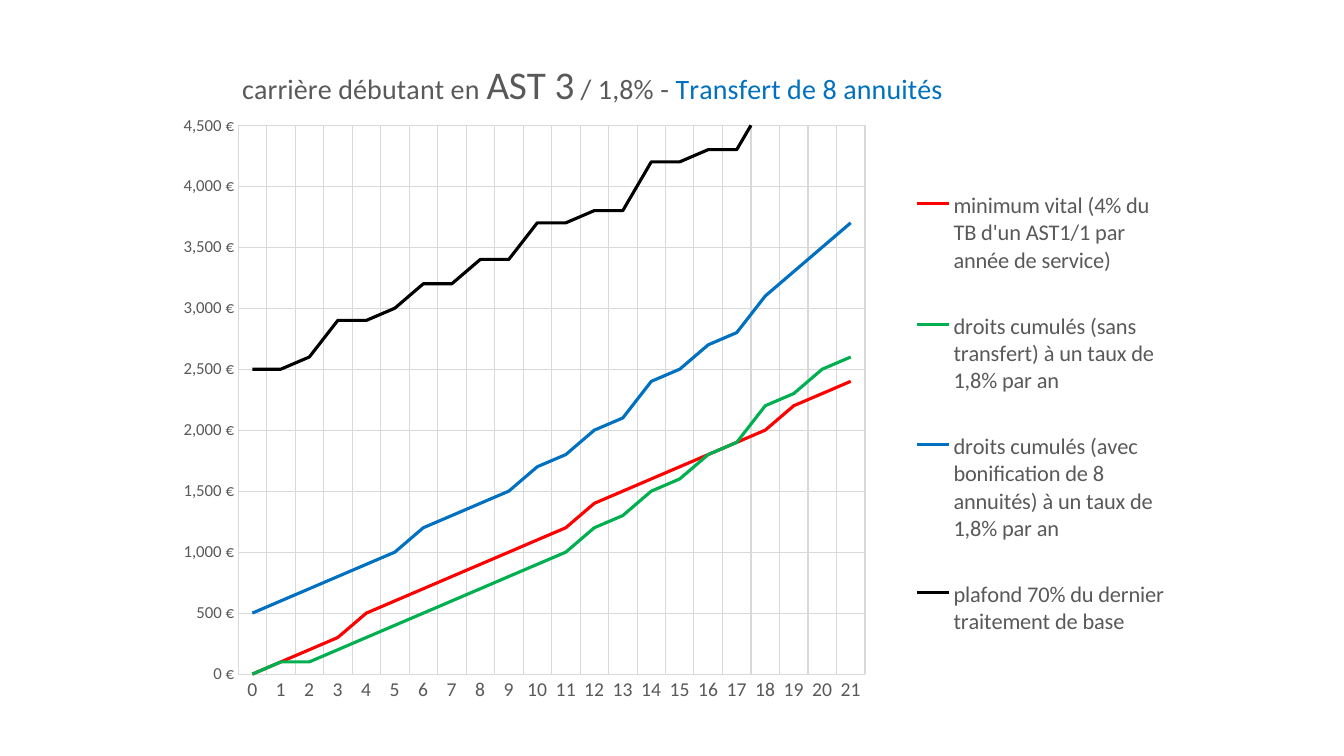
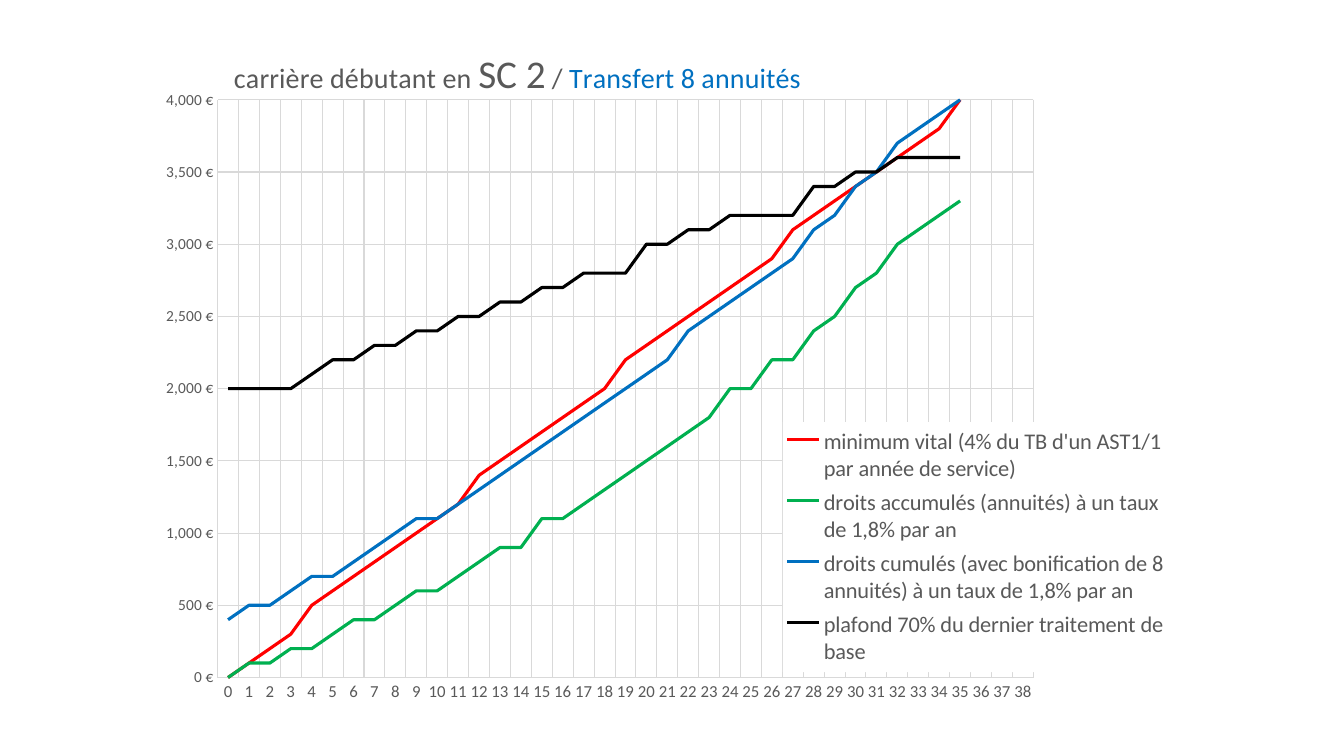
from pptx import Presentation
from pptx.chart.data import CategoryChartData as Data
from pptx.dml.color import RGBColor as Rgb
from pptx.enum.chart import XL_CHART_TYPE as Kind, XL_LEGEND_POSITION as Side
from pptx.enum.chart import XL_MARKER_STYLE as Mark, XL_TICK_MARK as Tick
from pptx.oxml.ns import qn
from pptx.oxml.xmlchemy import OxmlElement as Elem
from pptx.util import Cm, Pt

HUES = {"text": "595959", "grid": "D9D9D9", "red": "FF0000", "green": "00B050",
        "blue": "0070C0", "black": "000000", "white": "FFFFFF"}
FACE = "Calibri"
LINES = ["red", "green", "blue", "black"]
BASE = 1.132
UNIT = 100

SLIDES = [
    {"title": [("carrière débutant en ", 20, "text"), ("AST 3", 28, "text"),
               (" / 1,8% - ", 20, "text"), ("Transfert de 8 annuités", 20, "blue")],
     "name": "droits cumulés (sans transfert) à un taux de 1,8% par an",
     "years": 22, "top": 4500, "sizes": (14, 12),
     "head": (0.078, 0.022), "plot": (0.077, 0.123, 0.611, 0.819),
     "key": (0.734, 0.166, 0.25, 0.777),
     "green": [0, 1, 1, 2, 3, 4, 5, 6, 7, 8, 9, 10, 12, 13, 15, 16, 18, 19, 22,
               23, 25, 26],
     "blue": [5, 6, 7, 8, 9, 10, 12, 13, 14, 15, 17, 18, 20, 21, 24, 25, 27, 28,
              31, 33, 35, 37],
     "black": [25, 25, 26, 29, 29, 30, 32, 32, 34, 34, 37, 37, 38, 38, 42, 42,
               43, 43, 47, 47, 49, 49]},
    {"title": [("carrière débutant en ", 20, "text"), ("SC 2", 28, "text"),
               (" / ", 20, "text"), ("Transfert 8 annuités", 20, "blue")],
     "name": "droits accumulés (annuités) à un taux de 1,8% par an",
     "years": 39, "top": 4000, "sizes": (12, 11),
     "head": (0.07, 0.005), "plot": (0.057, 0.085, 0.795, 0.862),
     "key": (0.608, 0.566, 0.375, 0.373),
     "green": [0, 1, 1, 2, 2, 3, 4, 4, 5, 6, 6, 7, 8, 9, 9, 11, 11, 12, 13, 14,
               15, 16, 17, 18, 20, 20, 22, 22, 24, 25, 27, 28, 30, 31, 32, 33],
     "blue": [4, 5, 5, 6, 7, 7, 8, 9, 10, 11, 11, 12, 13, 14, 15, 16, 17, 18, 19,
              20, 21, 22, 24, 25, 26, 27, 28, 29, 31, 32, 34, 35, 37, 38, 39, 40],
     "black": [20, 20, 20, 20, 21, 22, 22, 23, 23, 24, 24, 25, 25, 26, 26, 27, 27,
               28, 28, 28, 30, 30, 31, 31, 32, 32, 32, 32, 34, 34, 35, 35, 36, 36,
               36, 36]},
]


def style(font, size, hue):
    font.name = FACE
    font.size = Pt(size)
    font.bold = False
    font.color.rgb = Rgb.from_string(HUES[hue])


def place(part, spot, box, inner=False):
    old = part.find(qn("c:layout"))
    if old is not None:
        part.remove(old)
    frame = Elem("c:layout")
    rule = Elem("c:manualLayout")
    frame.append(rule)
    pairs = [("layoutTarget", "inner")] if inner else []
    pairs += [("xMode", "edge"), ("yMode", "edge")]
    pairs += zip("xywh", box)
    for tag, val in pairs:
        item = Elem("c:" + tag)
        item.set("val", str(val))
        rule.append(item)
    part.insert(spot, frame)


deck = Presentation()
deck.slide_width = Cm(33.87)
deck.slide_height = Cm(19.05)

for info in SLIDES:
    slide = deck.slides.add_slide(deck.slide_layouts[6])
    red = [round(BASE * n) for n in range(len(info["black"]))]
    rows = [
        ("minimum vital (4% du TB d'un AST1/1 par année de service)", red),
        (info["name"], info["green"]),
        ("droits cumulés (avec bonification de 8 annuités) à un taux de 1,8% par an",
         info["blue"]),
        ("plafond 70% du dernier traitement de base", info["black"]),
    ]
    data = Data()
    data.categories = [str(n) for n in range(info["years"])]
    for name, vals in rows:
        data.add_series(name, [UNIT * val for val in vals])

    chart = slide.shapes.add_chart(Kind.LINE, Cm(4.01), Cm(1.08), Cm(25.86),
                                   Cm(16.89), data).chart
    style(chart.font, 10, "black")

    chart.has_title = True
    para = chart.chart_title.text_frame.paragraphs[0]
    for text, size, hue in info["title"]:
        run = para.add_run()
        run.text = text
        style(run.font, size, hue)

    plot = chart.plots[0]
    plot.vary_by_categories = False
    for line, hue in zip(plot.series, LINES):
        line.smooth = False
        line.marker.style = Mark.NONE
        line.format.line.width = Pt(2.25)
        line.format.line.color.rgb = Rgb.from_string(HUES[hue])

    years, euros = chart.category_axis, chart.value_axis
    for axis, size in zip((years, euros), info["sizes"]):
        style(axis.tick_labels.font, size, "text")
        axis.major_tick_mark = axis.minor_tick_mark = Tick.NONE
        axis.has_major_gridlines = True
        for line in (axis.major_gridlines.format.line, axis.format.line):
            line.width = Pt(0.75)
            line.color.rgb = Rgb.from_string(HUES["grid"])
    euros.format.line.fill.background()
    euros.minimum_scale = 0
    euros.maximum_scale = info["top"]
    euros.major_unit = 500
    euros.tick_labels.number_format = r"#,##0\ \€"
    euros.tick_labels.number_format_is_linked = False

    chart.has_legend = True
    chart.legend.position = Side.RIGHT
    chart.legend.include_in_layout = False
    style(chart.legend.font, 16, "text")

    root = chart.element
    key = root.find(".//" + qn("c:legend"))
    place(root.find(".//" + qn("c:title")), 1, info["head"])
    place(root.find(".//" + qn("c:plotArea")), 0, info["plot"], True)
    place(key, 1, info["key"])

    props, fill, tint = Elem("c:spPr"), Elem("a:solidFill"), Elem("a:srgbClr")
    tint.set("val", HUES["white"])
    fill.append(tint)
    props.append(fill)
    key.find(qn("c:txPr")).addprevious(props)

deck.save("out.pptx")
